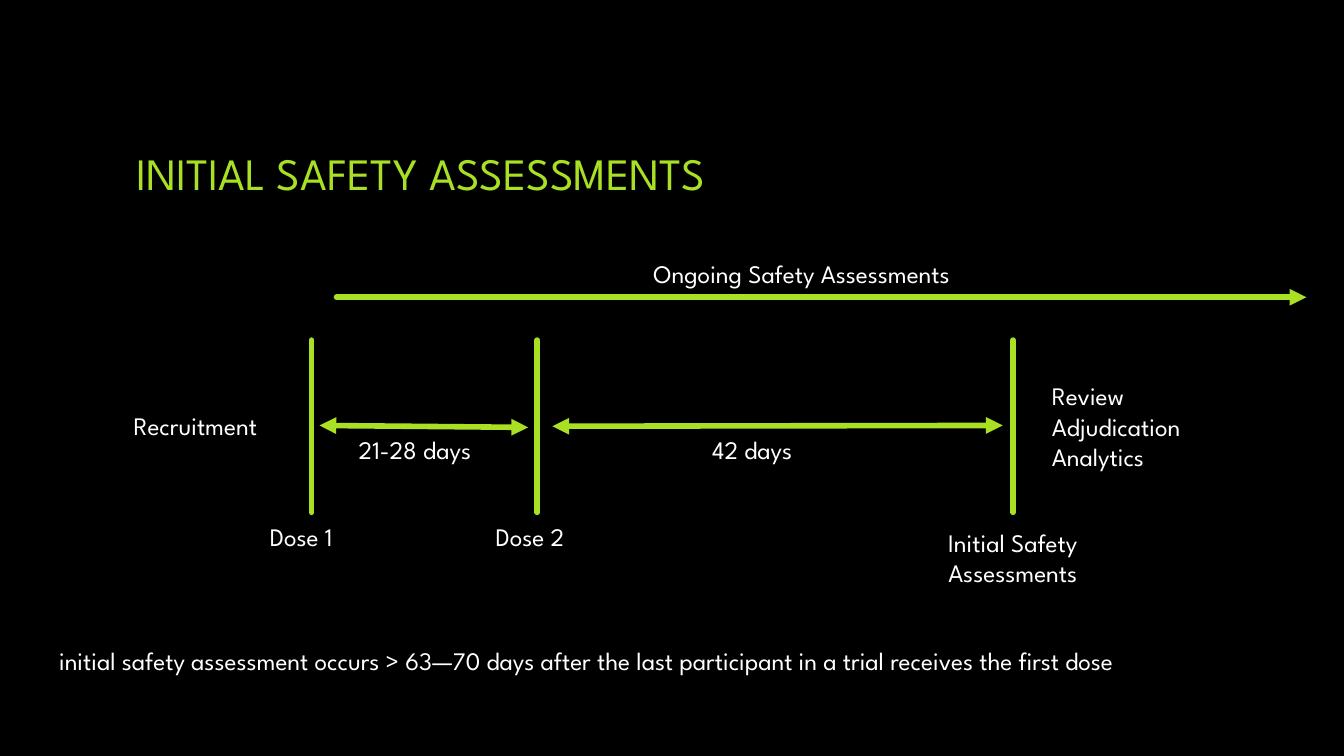
from lxml import etree
from pptx import Presentation
from pptx.dml.color import RGBColor
from pptx.enum import shapes, text
from pptx.oxml.ns import qn
from pptx.util import Cm, Pt

LIME = RGBColor(0xA9, 0xE0, 0x23)
WHITE = RGBColor(0xFF, 0xFF, 0xFF)
BLACK = RGBColor(0, 0, 0)
FONT = "League Spartan"
LEFT, CENTER = text.PP_ALIGN.LEFT, text.PP_ALIGN.CENTER

# All lengths in centimetres
TITLE = ("INITIAL SAFETY ASSESSMENTS", (3.18, 1.7, 27.51, 5.28))
TICK_TOP, TICK_BOTTOM = 8.57, 12.91
TICKS = [7.85, 13.54, 25.53]  # dose 1, dose 2, initial assessment

# start, end, arrowheads
ARROWS = [
    ((8.05, 10.72), (13.31, 10.77), ("headEnd", "tailEnd")),
    ((13.92, 10.74), (25.27, 10.72), ("headEnd", "tailEnd")),
    ((8.48, 7.49), (32.92, 7.49), ("tailEnd",)),
]

# lines, (left, top, width, height), alignment, wrap
LABELS = [
    (["Recruitment"], (3.12, 10.21, 4.29, 1.02), LEFT, False),
    (["21-28 days"], (8.79, 10.82, 3.81, 1.02), LEFT, False),
    (["42 days"], (17.7, 10.82, 2.87, 1.02), LEFT, False),
    (["Dose 1"], (6.55, 13, 2.59, 1.02), LEFT, True),
    (["Dose 2"], (12.24, 13, 2.59, 1.02), LEFT, True),
    (["Initial Safety Assessments"], (23.39, 13.16, 4.27, 1.8), CENTER, True),
    (["Review", "Adjudication", "Analytics"], (26.26, 9.47, 5.56, 2.57), LEFT, True),
    (["Ongoing Safety Assessments"], (12.24, 6.38, 15.93, 1.02), CENTER, True),
    (["initial safety assessment occurs > 63—70 days after the last participant "
      "in a trial receives the first dose"], (1.24, 16.13, 31.37, 1.02), LEFT, True),
]


def write(frame, lines, align, size, color, **frame_format):
    for name, value in frame_format.items():
        setattr(frame, name, value)
    for index, line in enumerate(lines):
        para = frame.paragraphs[0] if index == 0 else frame.add_paragraph()
        para.alignment = align
        span = para.add_run()
        span.text = line
        for name, value in {"name": FONT, "size": Pt(size)}.items():
            setattr(span.font, name, value)
        span.font.color.rgb = color


def add_line(page, start, end, heads=()):
    line = page.shapes.add_connector(
        shapes.MSO_CONNECTOR.STRAIGHT, *map(Cm, start + end))
    line.line.color.rgb = LIME
    line.line.width = Pt(4)
    properties = line.line._get_or_add_ln()
    properties.set("cap", "rnd")
    for head in heads:
        etree.SubElement(properties, qn(f"a:{head}"), type="triangle")
    etree.SubElement(line._element.spPr, qn("a:effectLst"))


def main():
    deck = Presentation()
    deck.slide_width, deck.slide_height = Cm(33.87), Cm(19.05)
    page = deck.slides.add_slide(deck.slide_layouts[5])
    page.background.fill.solid()
    page.background.fill.fore_color.rgb = BLACK

    heading, place = TITLE
    title = page.shapes.title
    for name, value in zip(("left", "top", "width", "height"), place):
        setattr(title, name, Cm(value))
    write(title.text_frame, [heading], LEFT, 32, LIME,
          vertical_anchor=text.MSO_ANCHOR.MIDDLE)

    for x in TICKS:
        add_line(page, (x, TICK_TOP), (x, TICK_BOTTOM))
    for start, end, heads in ARROWS:
        add_line(page, start, end, heads)
    for lines, place, align, wrap in LABELS:
        box = page.shapes.add_textbox(*map(Cm, place))
        write(box.text_frame, lines, align, 18, WHITE, word_wrap=wrap,
              auto_size=text.MSO_AUTO_SIZE.SHAPE_TO_FIT_TEXT)

    deck.save("out.pptx")


if __name__ == "__main__":
    main()
